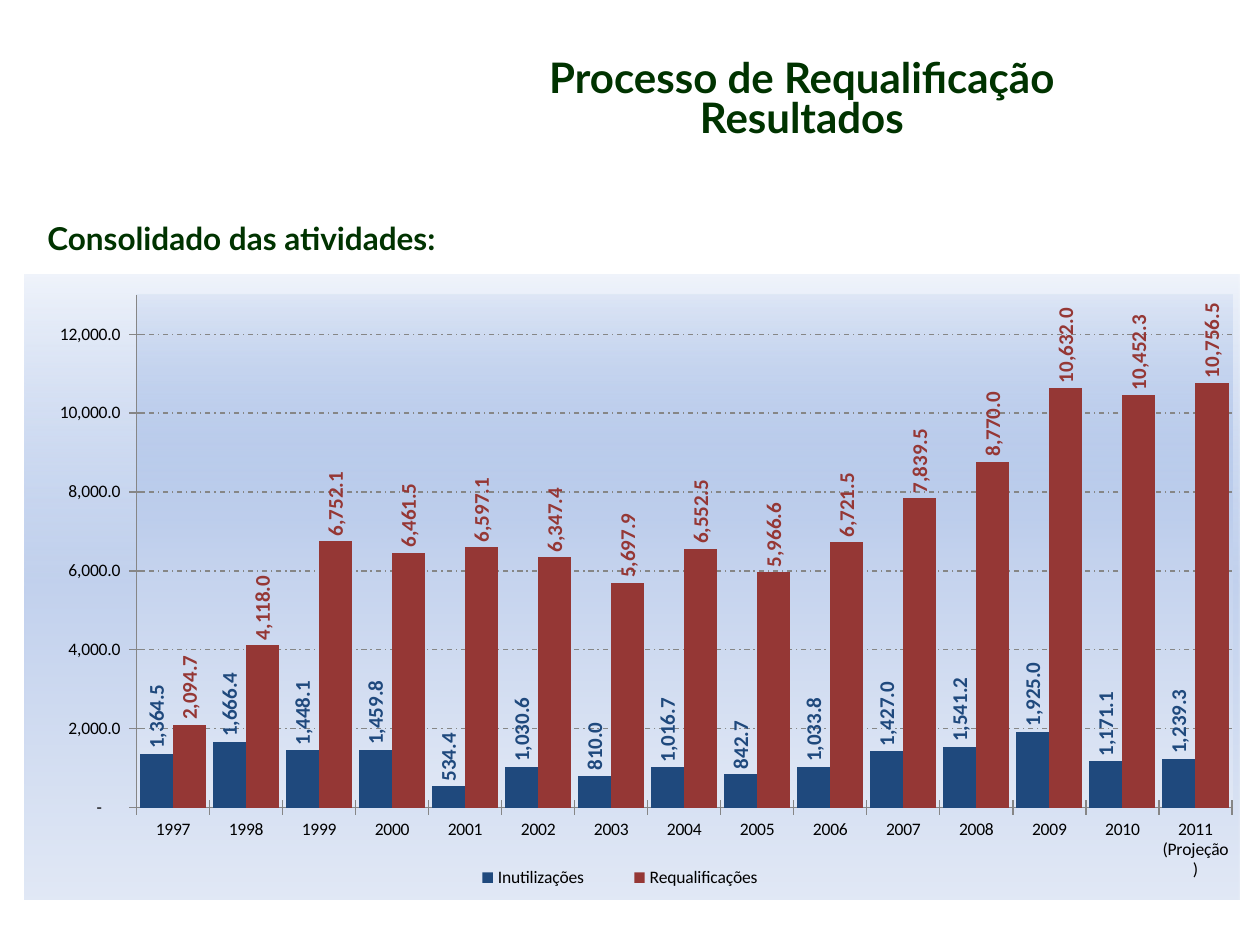
from typing import NamedTuple

from lxml import etree
from pptx import Presentation
from pptx.chart.data import CategoryChartData
from pptx.dml.color import RGBColor
from pptx.enum.chart import XL_CHART_TYPE, XL_LABEL_POSITION, XL_LEGEND_POSITION, XL_TICK_MARK
from pptx.enum.dml import MSO_LINE
from pptx.enum.text import MSO_ANCHOR, PP_ALIGN
from pptx.oxml import parse_xml
from pptx.oxml.ns import nsdecls, qn
from pptx.util import Pt

COLUMNS = XL_CHART_TYPE.COLUMN_CLUSTERED
OUTSIDE_END = XL_LABEL_POSITION.OUTSIDE_END
LEGEND_BOTTOM = XL_LEGEND_POSITION.BOTTOM
CROSS = XL_TICK_MARK.CROSS
NO_TICK = XL_TICK_MARK.NONE
DASH_DOT = MSO_LINE.DASH_DOT
TOP = MSO_ANCHOR.TOP
LEFT, CENTER = PP_ALIGN.LEFT, PP_ALIGN.CENTER

GREEN, GRAY, BLACK = "003300", "868686", "000000"
LABEL_FORMAT = r"#,##0.0_);\(#,##0.0\)"
AXIS_FORMAT = r'_(* #,##0.0_);_(* \(#,##0.0\);_(* "-"??_);_(@_)'


class Area(NamedTuple):
    left: float
    top: float
    width: float
    height: float


class Activity(NamedTuple):
    name: str
    color: str
    values: tuple


YEARS = [str(year) for year in range(1997, 2011)] + ["2011 (Projeção)"]
ACTIVITIES = [
    Activity("Inutilizações", "1F497D", (
        1364.5, 1666.4, 1448.1, 1459.8, 534.4, 1030.6, 810, 1016.7,
        842.7, 1033.8, 1427, 1541.2, 1925, 1171.1, 1239.3)),
    Activity("Requalificações", "953735", (
        2094.7, 4118, 6752.1, 6461.5, 6597.1, 6347.4, 5697.9, 6552.5,
        5966.6, 6721.5, 7839.5, 8770, 10632, 10452.3, 10756.5)),
]


def rgb(color: str) -> RGBColor:
    return RGBColor.from_string(color)


def place(shape, area: Area) -> None:
    shape.left, shape.top, shape.width, shape.height = map(Pt, area)


def write_heading(box, lines: list[str], size: float, align, spacing: float) -> None:
    frame = box.text_frame
    frame.word_wrap = True
    frame.vertical_anchor = TOP
    for index, line in enumerate(lines):
        para = frame.add_paragraph() if index else frame.paragraphs[0]
        para.alignment = align
        para.line_spacing = spacing
        para.space_before = Pt(0)
        span = para.add_run()
        span.text = line
        span.font.name = "Lato"
        span.font.size = Pt(size)
        span.font.bold = True
        span.font.color.rgb = rgb(GREEN)


def gradient_properties():
    """Vertical blue gradient whose first stop is mostly transparent."""
    return parse_xml(
        f'<c:spPr {nsdecls("c", "a")}><a:gradFill rotWithShape="1"><a:gsLst>'
        '<a:gs pos="0"><a:srgbClr val="9AB5E4"><a:alpha val="15000"/></a:srgbClr></a:gs>'
        '<a:gs pos="50000"><a:srgbClr val="C2D1ED"/></a:gs>'
        '<a:gs pos="100000"><a:srgbClr val="E1E8F5"/></a:gs>'
        '</a:gsLst><a:lin ang="5400000" scaled="0"/></a:gradFill>'
        '<a:ln><a:noFill/></a:ln></c:spPr>')


def set_layout(parent, index: int, fractions: Area, inner: bool = False) -> None:
    """Fix a chart part at fractions of the chart's size."""
    for old in parent.findall(qn("c:layout")):
        parent.remove(old)
    layout = etree.Element(qn("c:layout"))
    manual = etree.SubElement(layout, qn("c:manualLayout"))
    settings = [("layoutTarget", "inner")] if inner else []
    settings += [("xMode", "edge"), ("yMode", "edge")]
    settings += zip("xywh", map(str, fractions))
    for tag, value in settings:
        etree.SubElement(manual, qn(f"c:{tag}")).set("val", value)
    parent.insert(index, layout)


def style_axis(axis) -> None:
    axis.major_tick_mark = CROSS
    axis.minor_tick_mark = NO_TICK
    axis.format.line.color.rgb = rgb(GRAY)
    axis.tick_labels.font.size = Pt(10)


def style_series(series, color: str) -> None:
    series.format.fill.solid()
    series.format.fill.fore_color.rgb = rgb(color)
    labels = series.data_labels
    labels.show_value = True
    labels.position = OUTSIDE_END
    labels.number_format = LABEL_FORMAT
    labels.number_format_is_linked = False
    labels.font.size = Pt(12)
    labels.font.bold = True
    labels.font.color.rgb = rgb(color)
    # Labels read upwards
    body = labels._element.find(qn("c:txPr")).find(qn("a:bodyPr"))
    body.set("rot", "-5400000")
    body.set("vert", "horz")


def add_activity_chart(slide, area: Area) -> None:
    data = CategoryChartData()
    data.categories = YEARS
    for activity in ACTIVITIES:
        data.add_series(activity.name, activity.values)
    chart = slide.shapes.add_chart(COLUMNS, *map(Pt, area), data).chart
    chart.has_title = False
    chart.font.name = "Calibri"
    chart.font.size = Pt(10)
    chart.font.color.rgb = rgb(BLACK)

    # Columns
    plot = chart.plots[0]
    plot.gap_width = 21
    plot.overlap = 0
    plot.vary_by_categories = False
    for series, activity in zip(plot.series, ACTIVITIES):
        style_series(series, activity.color)

    # Axes
    style_axis(chart.category_axis)
    value_axis = chart.value_axis
    style_axis(value_axis)
    value_axis.minimum_scale, value_axis.maximum_scale = 0, 13000
    value_axis.major_unit = 2000
    value_axis.tick_labels.number_format = AXIS_FORMAT
    value_axis.tick_labels.number_format_is_linked = False
    grid = value_axis.major_gridlines.format.line
    grid.color.rgb = rgb(GRAY)
    grid.width = Pt(0.75)
    grid.dash_style = DASH_DOT

    # Legend
    chart.has_legend = True
    chart.legend.position = LEGEND_BOTTOM
    chart.legend.include_in_layout = False
    set_layout(chart.legend._element, 1, Area(0.34, 0.94, 0.3, 0.05))

    # Plot position and backgrounds
    space = chart._chartSpace
    plot_area = space.chart.plotArea
    set_layout(plot_area, 0, Area(0.092, 0.032, 0.902, 0.821), inner=True)
    plot_area.append(gradient_properties())
    space.chart.addnext(gradient_properties())


def main() -> None:
    deck = Presentation()
    deck.slide_width, deck.slide_height = Pt(720), Pt(540)
    slide = deck.slides.add_slide(deck.slide_layouts[5])

    # Title
    title = slide.shapes.title
    place(title, Area(196.5, 31.5, 523.5, 54))
    write_heading(title, ["Processo de Requalificação", "Resultados"], 24, CENTER, 0.8)

    # Chart heading
    heading = slide.shapes.add_textbox(*map(Pt, Area(20, 121.5, 669, 29)))
    write_heading(heading, ["Consolidado das atividades:"], 18, LEFT, 1.0)

    # Chart
    add_activity_chart(slide, Area(14.2, 157, 694, 357))
    deck.save("out.pptx")


if __name__ == "__main__":
    main()
